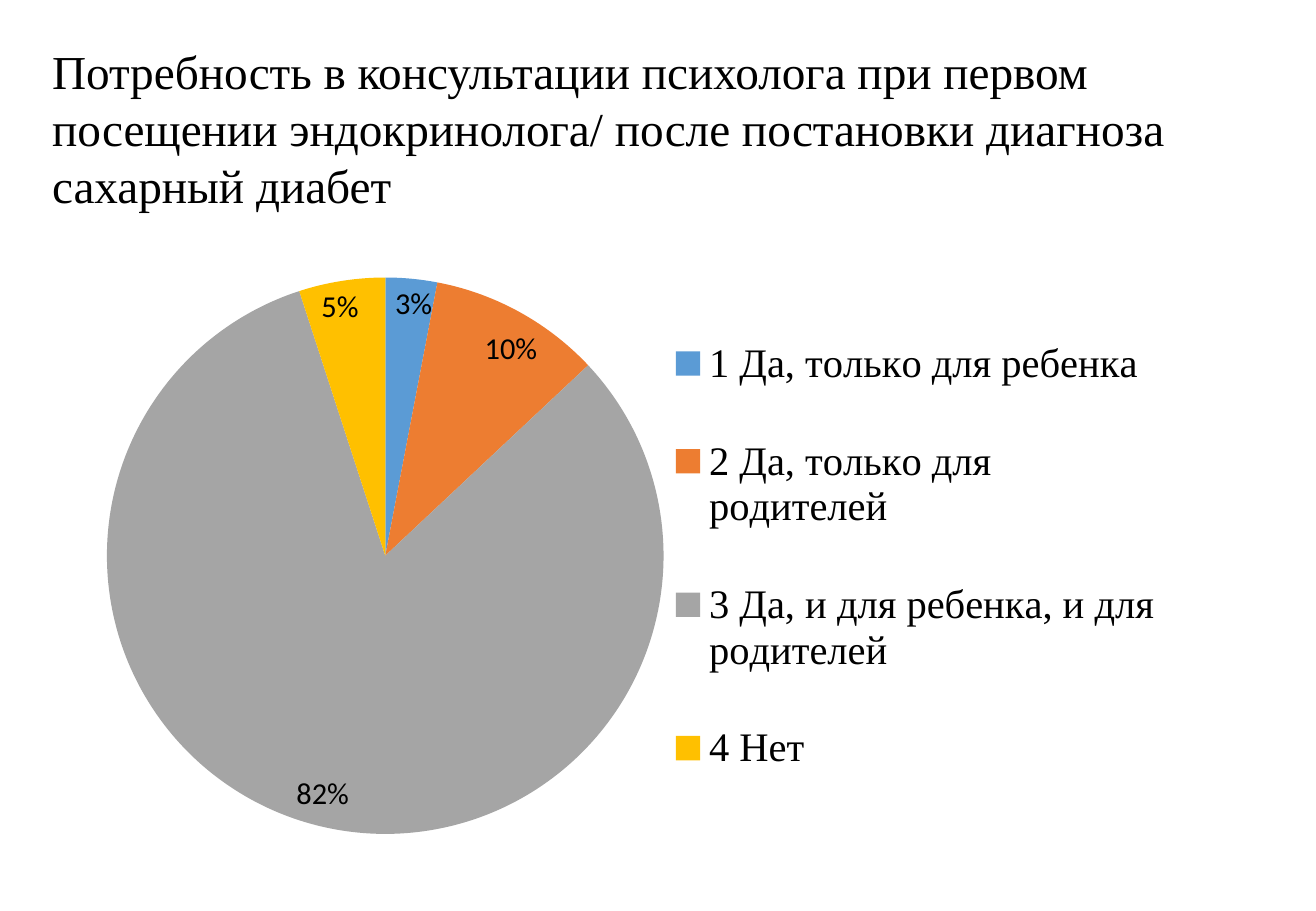
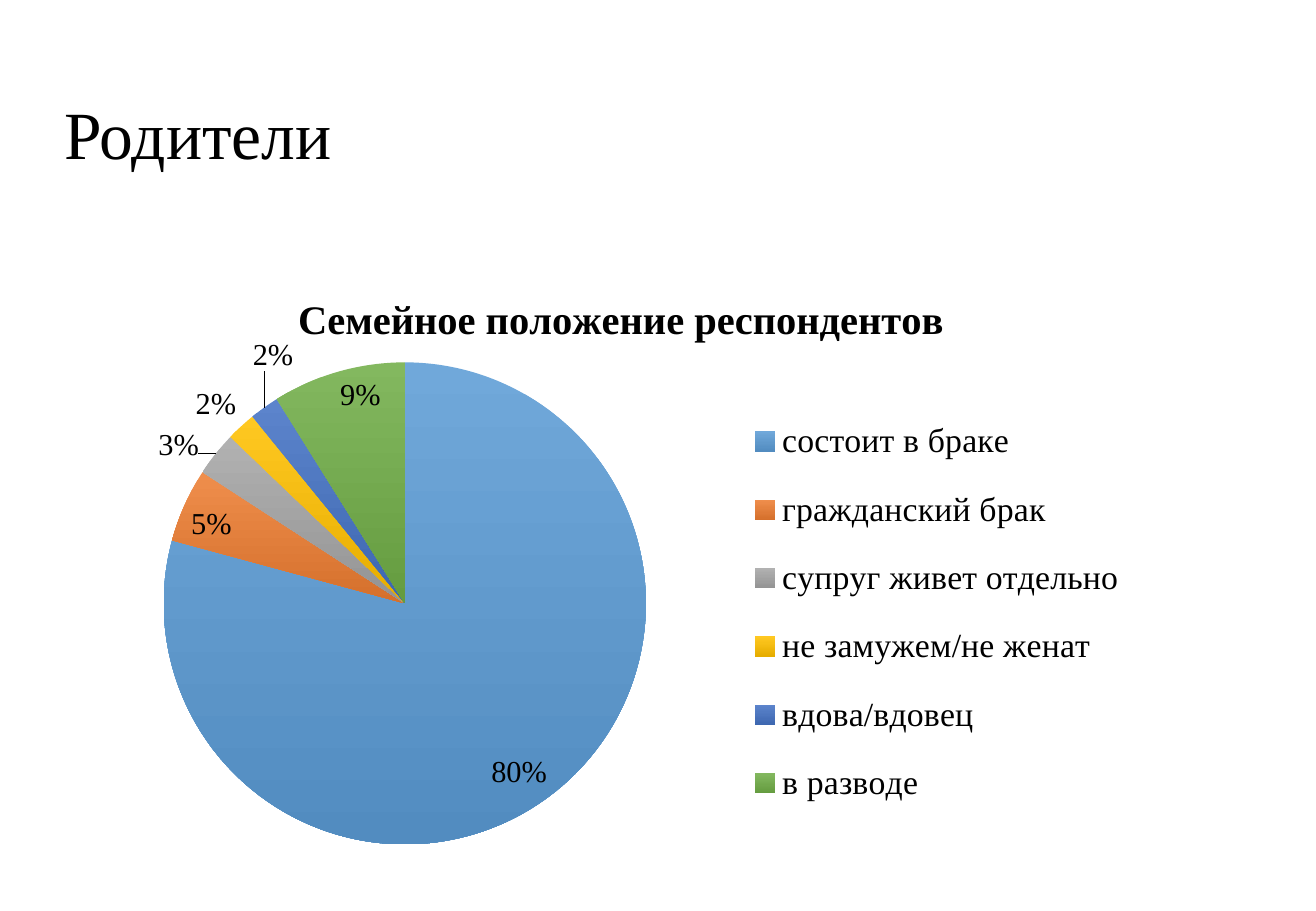
from lxml import etree
from pptx import Presentation
from pptx.chart.data import CategoryChartData
from pptx.dml.color import RGBColor
from pptx.enum.chart import XL_CHART_TYPE, XL_LABEL_POSITION, XL_LEGEND_POSITION
from pptx.enum.text import MSO_ANCHOR
from pptx.oxml.ns import qn
from pptx.util import Inches, Pt

PIE = XL_CHART_TYPE.PIE
LEGEND_RIGHT = XL_LEGEND_POSITION.RIGHT
INSIDE_END = XL_LABEL_POSITION.INSIDE_END
OUTSIDE_END = XL_LABEL_POSITION.OUTSIDE_END
ANCHOR_TOP, ANCHOR_MIDDLE = MSO_ANCHOR.TOP, MSO_ANCHOR.MIDDLE

SERIF, SANS = "Times New Roman", "Calibri"
BLACK = "000000"
PALETTE = ["5B9BD5", "ED7D31", "A5A5A5", "FFC000", "4472C4", "70AD47"]
PERCENT_FORMAT = '0"%"'


def color(hex_text):
    """Turn a hex string into a colour."""
    return RGBColor.from_string(hex_text)


def blend(hex_text, target, share):
    """Mix a colour with a target colour by the given share."""
    pairs = zip(color(hex_text), color(target))
    return "".join(f"{round(a + (b - a) * share):02X}" for a, b in pairs)


def style_font(font, name, size, bold=False):
    """Give a font its face, size, weight and black colour."""
    font.name, font.size, font.bold = name, Pt(size), bold
    font.color.rgb = color(BLACK)


def add_title(slide, box, text, size, anchor=ANCHOR_TOP, line_spacing=1.0):
    """Place the slide title in a box."""
    frame = slide.shapes.add_textbox(*map(Inches, box)).text_frame
    frame.word_wrap = True
    frame.vertical_anchor = anchor
    frame.text = text
    paragraph = frame.paragraphs[0]
    paragraph.line_spacing = line_spacing
    style_font(paragraph.runs[0].font, SERIF, size)


def set_layout(parent, index, values, inner=False, edge=True):
    """Give a chart part a manual layout in fractions of the chart."""
    for old_layout in parent.findall(qn("c:layout")):
        parent.remove(old_layout)
    layout = etree.Element(qn("c:layout"))
    manual = etree.SubElement(layout, qn("c:manualLayout"))
    settings = [("layoutTarget", "inner")] if inner else []
    if edge:
        settings += [("xMode", "edge"), ("yMode", "edge")]
    settings += zip("xywh", values)
    for tag, value in settings:
        etree.SubElement(manual, qn(f"c:{tag}")).set("val", str(value))
    parent.insert(index, layout)


def paint_slice(fill, hex_text, shaded):
    """Fill a slice with a plain colour or a top-down shade of it."""
    if not shaded:
        fill.solid()
        fill.fore_color.rgb = color(hex_text)
        return
    fill.gradient()
    fill.gradient_angle = 270
    top, bottom = fill.gradient_stops
    top.color.rgb = color(blend(hex_text, "FFFFFF", 0.13))
    bottom.color.rgb = color(blend(hex_text, BLACK, 0.1))


def show_leader_lines(labels, visible):
    """Switch the lines between slices and moved labels on or off."""
    tag = qn("c:showLeaderLines")
    element = labels._element
    leader_lines = element.find(tag)
    if leader_lines is None:
        leader_lines = etree.SubElement(element, tag)
    leader_lines.set("val", str(int(visible)))


def move_labels(series, offsets, position, font_name):
    """Shift chosen labels from a position by fractions of the chart."""
    for index in offsets:
        label = series.points[index].data_label
        style_font(label.font, font_name, 18)
        label.position = position
    for element in series._element.iter(qn("c:dLbl")):
        index = int(element.find(qn("c:idx")).get("val"))
        number_format = etree.Element(qn("c:numFmt"))
        number_format.set("formatCode", PERCENT_FORMAT)
        number_format.set("sourceLinked", "0")
        element.insert(1, number_format)
        if any(offsets[index]):
            set_layout(element, 1, offsets[index], edge=False)


def add_pie(slide, box, shares, plot_box, legend_box, legend_size, offsets,
            moved_position=INSIDE_END, font_name=SERIF, title=None,
            shaded=False):
    """Place a pie chart with percent labels and a legend in a box."""
    data = CategoryChartData(number_format=PERCENT_FORMAT)
    data.categories = list(shares)
    data.add_series("Series 1", list(shares.values()))
    chart = slide.shapes.add_chart(PIE, *map(Inches, box), data).chart
    style_font(chart.font, font_name, 18)

    chart.has_title = title is not None
    if title:
        chart.chart_title.include_in_layout = False
        frame = chart.chart_title.text_frame
        frame.text = title
        style_font(frame.paragraphs[0].runs[0].font, SERIF, 24, bold=True)

    chart.has_legend = True
    legend = chart.legend
    legend.position = LEGEND_RIGHT
    legend.include_in_layout = False
    style_font(legend.font, SERIF, legend_size)
    set_layout(legend._element, 1, legend_box)

    plot = chart.plots[0]
    plot.vary_by_categories = True
    set_layout(plot._element.getparent(), 0, plot_box, inner=True)
    series = plot.series[0]
    for index, hex_text in enumerate(PALETTE[:len(shares)]):
        paint_slice(series.points[index].format.fill, hex_text, shaded)

    labels = series.data_labels
    labels.show_value = True
    labels.number_format = PERCENT_FORMAT
    labels.number_format_is_linked = False
    labels.position = INSIDE_END
    style_font(labels.font, font_name, 18)
    show_leader_lines(labels, moved_position == OUTSIDE_END)
    move_labels(series, offsets, moved_position, font_name)


def build_consultation_slide(slide):
    """Show who needs a psychologist after the diagnosis."""
    add_title(slide, (0.33, 0.3, 9.89, 1.51),
              "Потребность в консультации психолога при первом посещении "
              "эндокринолога/ после постановки диагноза сахарный диабет", 28)
    shares = {
        "1 Да, только для ребенка": 3,
        "2 Да, только для родителей": 10,
        "3 Да, и для ребенка, и для родителей": 82,
        "4 Нет": 5,
    }
    add_pie(slide, (0.88, 1.97, 8.81, 5.06), shares,
            plot_box=(0, 0.06, 0.52, 0.91),
            legend_box=(0.52, 0.08, 0.47, 0.87),
            legend_size=24, font_name=SANS,
            offsets={0: (0.02, 0), 1: (0.02, 0.02),
                     2: (-0.02, -0.01), 3: (-0.02, 0)})


def build_parents_slide(slide):
    """Show the marital status of the parents."""
    add_title(slide, (0.43, 0.41, 9.7, 1.45), "Родители", 40,
              anchor=ANCHOR_MIDDLE, line_spacing=0.9)
    shares = {
        "состоит в браке": 80,
        "гражданский брак": 5,
        "супруг живет отдельно": 3,
        "не замужем/не женат": 2,
        "вдова/вдовец": 2,
        "в разводе": 9,
    }
    add_pie(slide, (0.55, 2.2, 9.12, 4.9), shares,
            plot_box=(0, 0.16, 0.61, 0.81),
            legend_box=(0.61, 0.21, 0.35, 0.74),
            legend_size=20, title="Семейное положение респондентов",
            shaded=True, moved_position=OUTSIDE_END,
            offsets={2: (-0.01, 0.02), 3: (0, 0), 4: (0.03, -0.05)})


def main():
    """Build the presentation and save it."""
    presentation = Presentation()
    presentation.slide_width = Inches(10.83)
    presentation.slide_height = Inches(7.5)
    blank = presentation.slide_layouts[6]
    for build in (build_consultation_slide, build_parents_slide):
        build(presentation.slides.add_slide(blank))
    presentation.save("out.pptx")


if __name__ == "__main__":
    main()
